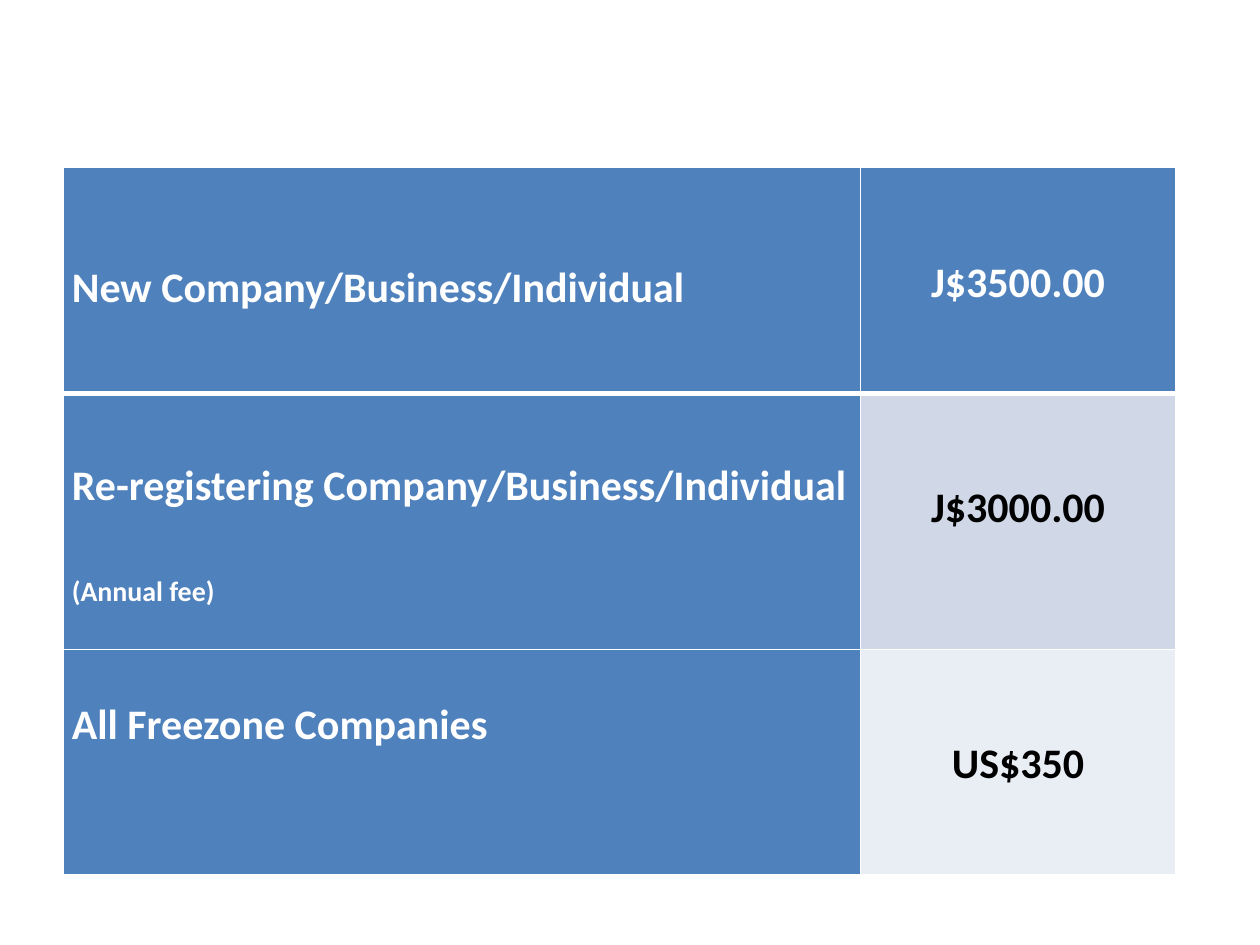
from lxml import etree
from pptx import Presentation
from pptx.dml.color import RGBColor
from pptx.enum import text
from pptx.oxml import ns
from pptx.util import Cm, Pt

THEME = {
    "font": "Calibri", "size": 24, "note_size": 16, "spacing": 1.15,
    "blue": "4F81BD", "band": "D0D8E8", "pale": "E9EDF4",
    "white": "FFFFFF", "black": "000000",
    "rule": 1, "header_rule": 3,
}
LEFT, CENTER = text.PP_ALIGN.LEFT, text.PP_ALIGN.CENTER

COLUMNS = [16.08, 6.35]
ROWS = [4.55, 5.16, 4.55]
# Each cell: lines, fill, text colour, distance of the text from the cell top
FEES = [
    [(["New Company/Business/Individual"], "blue", "white", 1.75),
     (["J$3500.00"], "blue", "white", 1.65)],
    [(["Re-registering Company/Business/Individual", "(Annual fee)"], "blue", "white", 1.2),
     (["J$3000.00"], "band", "black", 1.65)],
    [(["All Freezone Companies"], "blue", "white", 0.86),
     (["US$350"], "pale", "black", 1.65)],
]


def add_border(cell, side, width):
    tcPr = cell._tc.get_or_add_tcPr()
    ln = etree.SubElement(tcPr, ns.qn(f"a:ln{side}"), w=str(Pt(width)))
    fill = etree.SubElement(ln, ns.qn("a:solidFill"))
    etree.SubElement(fill, ns.qn("a:srgbClr"), val=THEME["white"])


prs = Presentation()
prs.slide_width, prs.slide_height = Cm(25.4), Cm(19.05)
s = prs.slides.add_slide(prs.slide_layouts[6])

table = s.shapes.add_table(
    len(ROWS), len(COLUMNS), Cm(1.27), Cm(3.38), Cm(sum(COLUMNS)), Cm(sum(ROWS))
).table
table.first_col = True
for column, width in zip(table.columns, COLUMNS):
    column.width = Cm(width)
for row, height in zip(table.rows, ROWS):
    row.height = Cm(height)

for i, fees in enumerate(FEES):
    for j, (lines, fill, color, top) in enumerate(fees):
        cell = table.cell(i, j)
        layout = {"margin_left": Cm(0.18), "margin_right": Cm(0.18),
                  "margin_top": Cm(top), "margin_bottom": 0,
                  "vertical_anchor": text.MSO_ANCHOR.TOP}
        for name, value in layout.items():
            setattr(cell, name, value)
        for side in "LRTB":
            under_header = (i, side) in [(0, "B"), (1, "T")]
            add_border(cell, side, THEME["header_rule" if under_header else "rule"])
        cell.fill.solid()
        cell.fill.fore_color.rgb = RGBColor.from_string(THEME[fill])

        tf = cell.text_frame
        tf.text = "\n".join(lines)
        for n, p in enumerate(tf.paragraphs):
            p.alignment = CENTER if j else LEFT
            p.line_spacing = THEME["spacing"]
            if n:
                p.space_before = Pt(33)
            r = p.runs[0]
            style = {"name": THEME["font"], "bold": True,
                     "size": Pt(THEME["note_size" if n else "size"])}
            for name, value in style.items():
                setattr(r.font, name, value)
            r.font.color.rgb = RGBColor.from_string(THEME[color])

prs.save("out.pptx")
